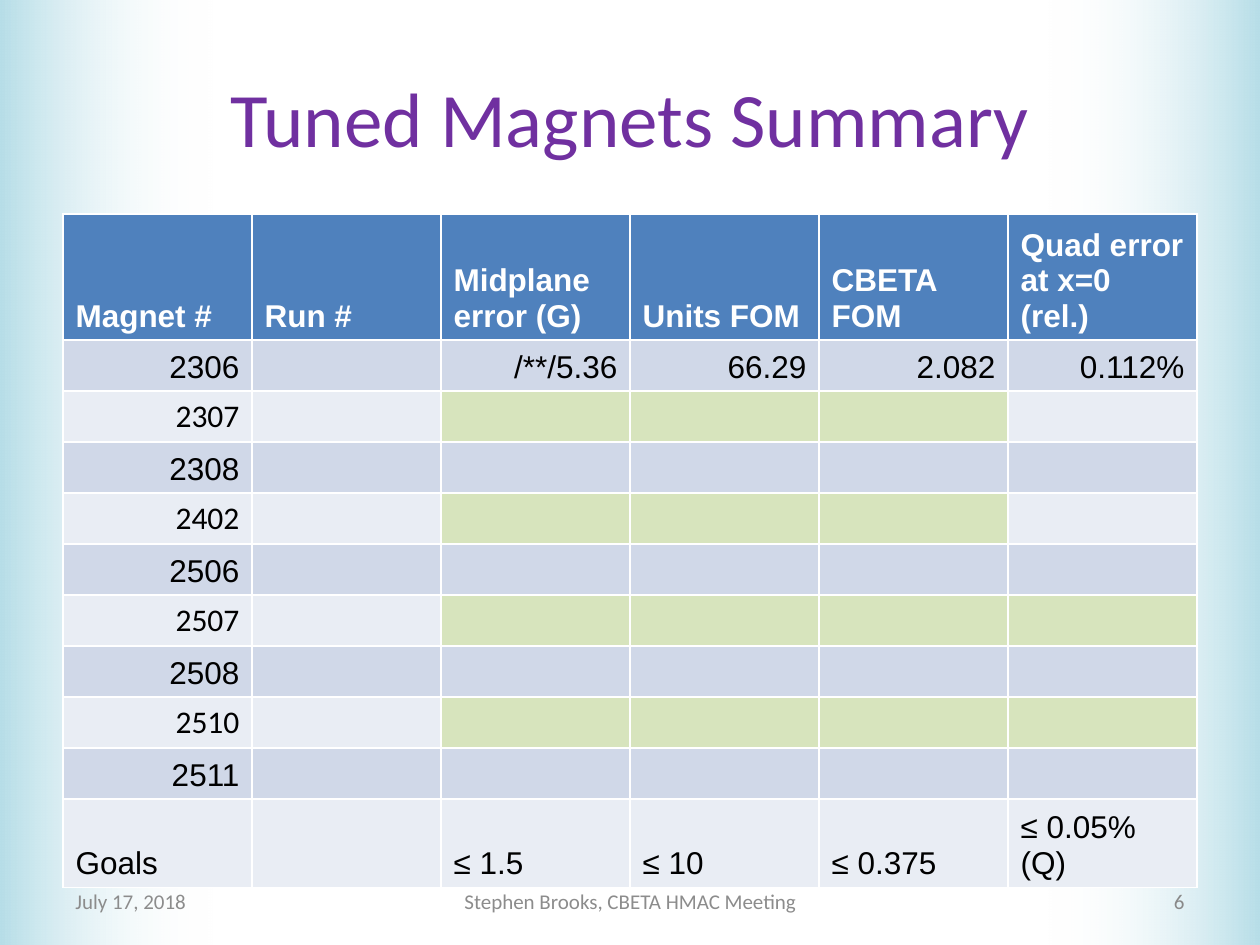
"""Build the tuned magnets summary slide with its results table."""
import pptx
import pptx.dml.color
import pptx.enum.shapes
import pptx.enum.text
import pptx.oxml
import pptx.oxml.ns
import pptx.util

PX = 914400 / 126
THEME = {
    "edge": "B7DEE8", "white": "FFFFFF", "title": "7030A0", "text": "000000",
    "header": "4F81BD", "dark band": "D0D8E8", "light band": "E9EDF4",
    "tuned": "D7E4BD", "footer": "8C8C8C", "page number": "898989",
    "title size": 44, "table size": 18, "footer size": 12,
    "sans": "Arial", "body": "Calibri",
}
ALIGN = pptx.enum.text.PP_ALIGN
ANCHOR = pptx.enum.text.MSO_ANCHOR


def emu(*lengths):
    return [pptx.util.Emu(round(length * PX)) for length in lengths]


def write(frame, text, size, font, color, align, bold=False):
    frame.text = text
    para = frame.paragraphs[0]
    para.alignment = align
    for span in para.runs:
        span.font.size = pptx.util.Pt(THEME[size])
        span.font.name = THEME[font]
        span.font.bold = bold
        span.font.color.rgb = pptx.dml.color.RGBColor.from_string(THEME[color])


deck = pptx.Presentation()
deck.slide_width, deck.slide_height = emu(1260, 945)
page = deck.slides.add_slide(deck.slide_layouts[6])

for left, rotation in ((1047, 180), (0, 0)):
    edge = page.shapes.add_shape(
        pptx.enum.shapes.MSO_SHAPE.RECTANGLE, *emu(left, 0, 213, 945))
    edge.rotation = rotation
    edge.shadow.inherit = False
    edge.line.fill.background()
    edge.fill.gradient()
    edge.fill.gradient_angle = 0
    for stop, position, color in zip(edge.fill.gradient_stops, (0, 1), ("edge", "white")):
        stop.position = position
        stop.color.rgb = pptx.dml.color.RGBColor.from_string(THEME[color])
    clear = edge.fill.gradient_stops[1].color
    solid = edge.element.spPr.findall(".//" + pptx.oxml.ns.qn("a:srgbClr"))[-1]
    solid.append(pptx.oxml.parse_xml(
        f'<a:alpha {pptx.oxml.ns.nsdecls("a")} val="0"/>'))

labels = (
    (63, 38, 1134, 157, "Tuned Magnets Summary", "title size", "title", ALIGN.CENTER),
    (63, 876, 294, 50, "July 17, 2018", "footer size", "footer", ALIGN.LEFT),
    (431, 876, 399, 50, "Stephen Brooks, CBETA HMAC Meeting", "footer size", "footer",
     ALIGN.CENTER),
    (903, 876, 294, 50, "6", "footer size", "page number", ALIGN.RIGHT),
)
for left, top, width, height, text, size, color, align in labels:
    box = page.shapes.add_textbox(*emu(left, top, width, height))
    box.text_frame.word_wrap = True
    box.text_frame.vertical_anchor = ANCHOR.MIDDLE
    write(box.text_frame, text, size, "body", color, align)

rows = [
    ["Magnet #", "Run #", "Midplane error (G)", "Units FOM", "CBETA FOM",
     "Quad error at x=0 (rel.)"],
    ["2306", "", "/**/5.36", "66.29", "2.082", "0.112%"],
    *([magnet] + [""] * 5 for magnet in
      ("2307", "2308", "2402", "2506", "2507", "2508", "2510", "2511")),
    ["Goals", "", "≤ 1.5", "≤ 10", "≤ 0.375", "≤ 0.05% (Q)"],
]
tuned_columns = {"2307": (2, 3, 4), "2402": (2, 3, 4),
                 "2507": (2, 3, 4, 5), "2510": (2, 3, 4, 5)}
table = page.shapes.add_table(
    len(rows), 6, *emu(63, 214, 1134, 51 * len(rows))).table
for row_index, row in enumerate(rows):
    is_header = row_index == 0
    is_goal = row[0] == "Goals"
    band = "header" if is_header else ("light band", "dark band")[row_index % 2]
    font = "body" if row[0] in tuned_columns else "sans"
    align = ALIGN.LEFT if is_header or is_goal else ALIGN.RIGHT
    for column, text in enumerate(row):
        cell = table.cell(row_index, column)
        cell.vertical_anchor = ANCHOR.BOTTOM
        fill = "tuned" if column in tuned_columns.get(row[0], ()) else band
        cell.fill.solid()
        cell.fill.fore_color.rgb = pptx.dml.color.RGBColor.from_string(THEME[fill])
        write(cell.text_frame, text, "table size", font,
              "white" if is_header else "text", align, is_header)

deck.save("out.pptx")
